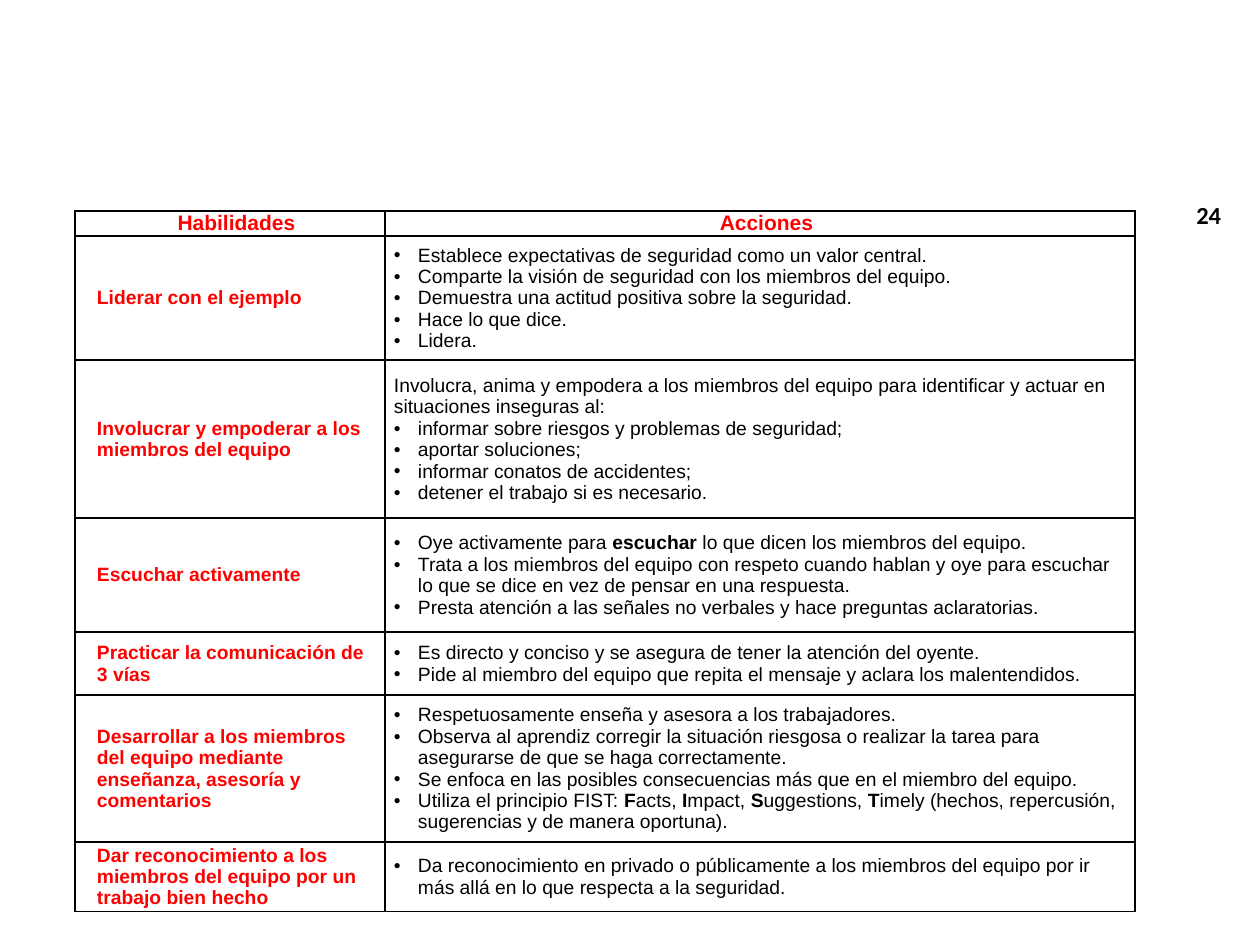
"""Build the slide with the table of safety leadership skills and actions."""
from lxml import etree
from pptx import Presentation
from pptx import util as u
from pptx.dml.color import RGBColor
from pptx.enum import text
from pptx.oxml.ns import qn

PX = 914400 // 126
RED, BLACK = "FF0000", "000000"
HEADERS = ["Habilidades", "Acciones"]
COLUMN_WIDTHS = [310, 750]
ROW_HEIGHTS = [25, 124, 158, 114, 63, 147, 69]
BULLET, BOLD = "• ", "*"
SKILLS = [
    ("Liderar con el ejemplo", [
        "• Establece expectativas de seguridad como un valor central.",
        "• Comparte la visión de seguridad con los miembros del equipo.",
        "• Demuestra una actitud positiva sobre la seguridad.",
        "• Hace lo que dice.",
        "• Lidera."]),
    ("Involucrar y empoderar a los miembros del equipo", [
        "Involucra, anima y empodera a los miembros del equipo para identificar y actuar en "
        "situaciones inseguras al:",
        "• informar sobre riesgos y problemas de seguridad;",
        "• aportar soluciones;",
        "• informar conatos de accidentes;",
        "• detener el trabajo si es necesario."]),
    ("Escuchar activamente", [
        "• Oye activamente para *escuchar* lo que dicen los miembros del equipo.",
        "• Trata a los miembros del equipo con respeto cuando hablan y oye para escuchar "
        "lo que se dice en vez de pensar en una respuesta.",
        "• Presta atención a las señales no verbales y hace preguntas aclaratorias."]),
    ("Practicar la comunicación de 3 vías", [
        "• Es directo y conciso y se asegura de tener la atención del oyente.",
        "• Pide al miembro del equipo que repita el mensaje y aclara los malentendidos."]),
    ("Desarrollar a los miembros del equipo mediante enseñanza, asesoría y comentarios", [
        "• Respetuosamente enseña y asesora a los trabajadores.",
        "• Observa al aprendiz corregir la situación riesgosa o realizar la tarea para "
        "asegurarse de que se haga correctamente.",
        "• Se enfoca en las posibles consecuencias más que en el miembro del equipo.",
        "• Utiliza el principio FIST: *F*acts, *I*mpact, *S*uggestions, *T*imely "
        "(hechos, repercusión, sugerencias y de manera oportuna)."]),
    ("Dar reconocimiento a los miembros del equipo por un trabajo bien hecho", [
        "• Da reconocimiento en privado o públicamente a los miembros del equipo por ir "
        "más allá en lo que respecta a la seguridad."]),
]


def format_run(run, size, color, bold, name="Arial"):
    run.font.name, run.font.size, run.font.bold = name, u.Pt(size), bold
    run.font.color.rgb = RGBColor.from_string(color)


def set_indent(paragraph, margin, indent=0):
    properties = paragraph._p.get_or_add_pPr()
    properties.set("marL", str(margin * PX))
    properties.set("indent", str(indent * PX))
    return properties


def style_cell(cell, vertical_margin):
    cell.vertical_anchor = text.MSO_ANCHOR.MIDDLE
    cell.margin_left = cell.margin_right = 9 * PX
    cell.margin_top = cell.margin_bottom = vertical_margin * PX
    properties = cell._tc.get_or_add_tcPr()
    for side in ("lnL", "lnR", "lnT", "lnB"):
        line = etree.SubElement(properties, qn("a:" + side), w=str(u.Pt(1)))
        fill = etree.SubElement(line, qn("a:solidFill"))
        etree.SubElement(fill, qn("a:srgbClr"), val=BLACK)
    cell.fill.background()


def fill_label(cell, label, size, alignment):
    style_cell(cell, 0)
    paragraph = cell.text_frame.paragraphs[0]
    paragraph.text = label
    paragraph.alignment = alignment
    set_indent(paragraph, 13)
    format_run(paragraph.runs[0], size, RED, True)


def fill_actions(cell, actions):
    style_cell(cell, 4)
    cell.text_frame.text = "\n".join(actions)
    for paragraph, action in zip(cell.text_frame.paragraphs, actions):
        paragraph.clear()
        if action.startswith(BULLET):
            properties = set_indent(paragraph, 24, -24)
            etree.SubElement(properties, qn("a:buFont"), typeface="Arial")
            etree.SubElement(properties, qn("a:buChar"), char=BULLET.strip())
        for index, part in enumerate(action.removeprefix(BULLET).split(BOLD)):
            run = paragraph.add_run()
            run.text = part
            format_run(run, 11, BLACK, index % 2 == 1)


def add_skills_table(slide):
    frame = slide.shapes.add_table(len(ROW_HEIGHTS), len(COLUMN_WIDTHS), 75 * PX, 211 * PX,
                                   sum(COLUMN_WIDTHS) * PX, sum(ROW_HEIGHTS) * PX)
    table = frame.table
    table.first_row = table.horz_banding = False
    for column, width in zip(table.columns, COLUMN_WIDTHS):
        column.width = width * PX
    for row, height in zip(table.rows, ROW_HEIGHTS):
        row.height = height * PX
    for column, header in enumerate(HEADERS):
        fill_label(table.cell(0, column), header, 12, text.PP_ALIGN.CENTER)
    for row, (skill, actions) in enumerate(SKILLS, start=1):
        fill_label(table.cell(row, 0), skill, 11, text.PP_ALIGN.LEFT)
        fill_actions(table.cell(row, 1), actions)


def add_page_number(slide, number):
    box = slide.shapes.add_textbox(1184 * PX, 194 * PX, 63 * PX, 43 * PX)
    box.text_frame.word_wrap = True
    box.text_frame.text = number
    format_run(box.text_frame.paragraphs[0].runs[0], 14, BLACK, True, "Calibri")


def main():
    presentation = Presentation()
    presentation.slide_width, presentation.slide_height = 1260 * PX, 945 * PX
    slide = presentation.slides.add_slide(presentation.slide_layouts[6])
    add_page_number(slide, "24")
    add_skills_table(slide)
    presentation.save("out.pptx")


if __name__ == "__main__":
    main()
